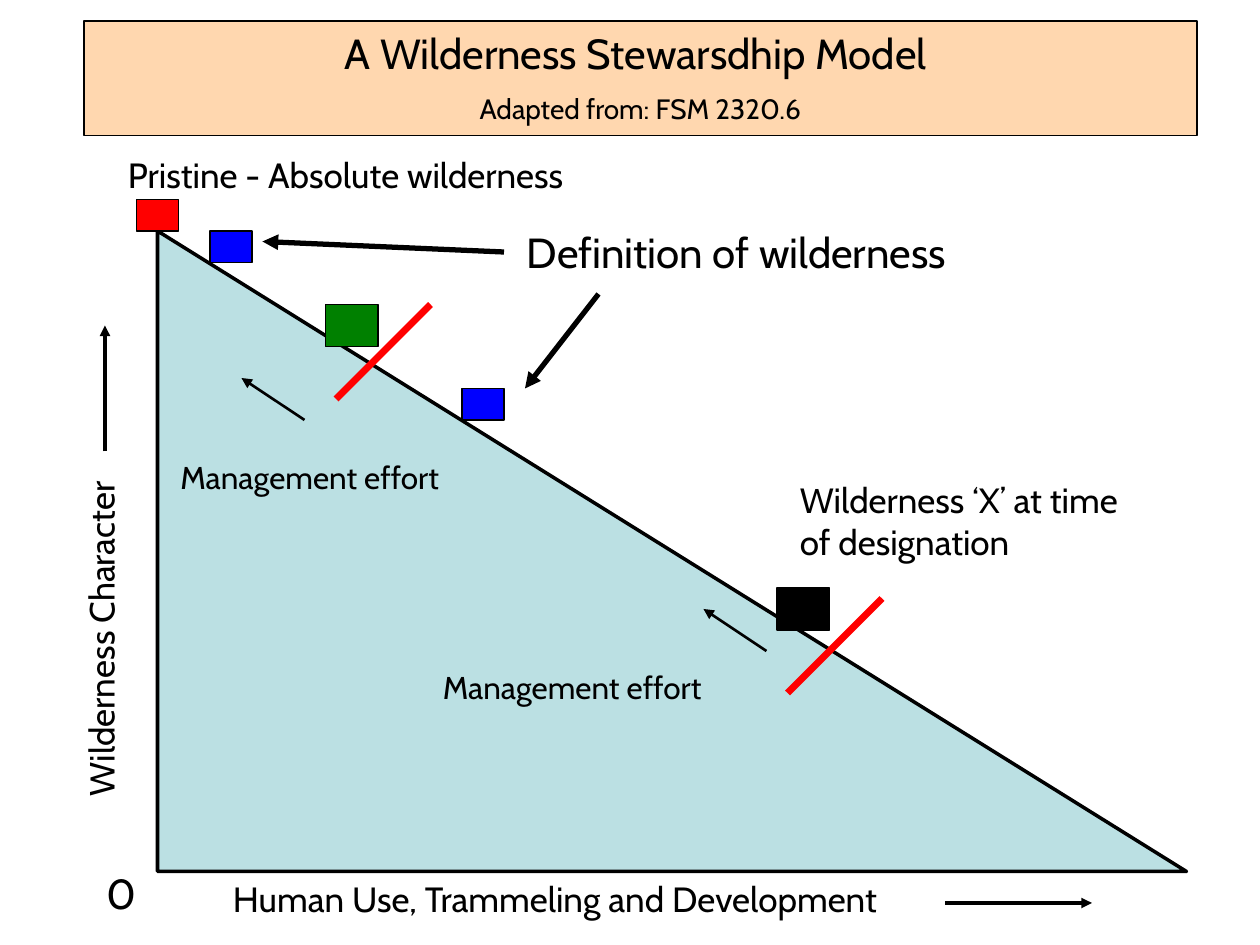
from dataclasses import dataclass

from lxml import etree
from pptx import Presentation
from pptx.dml.color import RGBColor
from pptx.enum.shapes import MSO_CONNECTOR, MSO_SHAPE
from pptx.enum.text import MSO_ANCHOR, PP_ALIGN
from pptx.oxml.ns import qn
from pptx.util import Emu, Pt

PX = 7620  # EMU per px, 120 px to the inch


def px(n):
    return Emu(n * PX)


@dataclass(frozen=True)
class Theme:
    font: str = "Cabin"
    ink: str = "000000"
    banner: str = "FFD7AF"
    area: str = "BBE0E3"
    red: str = "FF0000"
    blue: str = "0000FF"
    green: str = "008000"
    large: int = 24
    label: int = 20
    note: int = 18
    small: int = 16


class Canvas:
    def __init__(self, s, theme):
        self.s = s
        self.theme = theme

    def place(self, sp, box):
        sp.left, sp.top, sp.width, sp.height = map(px, box)

    def outline(self, sp, fill, width):
        sp.fill.solid()
        sp.fill.fore_color.rgb = RGBColor.from_string(fill)
        sp.line.color.rgb = RGBColor.from_string(self.theme.ink)
        sp.line.width = Pt(width)

    def style(self, p, size):
        for r in p.runs:
            r.font.name = self.theme.font
            r.font.size = Pt(size)
            r.font.color.rgb = RGBColor.from_string(self.theme.ink)

    def title(self, box, lines):
        sp = self.s.shapes.title
        self.place(sp, box)
        self.outline(sp, self.theme.banner, 0.75)
        tf = sp.text_frame
        tf.vertical_anchor = MSO_ANCHOR.TOP
        tf.text = "\n".join(text for text, _ in lines)
        for i, (p, (_, size)) in enumerate(zip(tf.paragraphs, lines)):
            p.alignment = PP_ALIGN.CENTER
            p.line_spacing = 1.0
            p.space_before = Pt(size / 2 if i else 0)
            self.style(p, size)

    def text(self, box, text, size, rotation=0):
        sp = self.s.shapes.add_textbox(*map(px, box))
        sp.rotation = rotation
        tf = sp.text_frame
        tf.word_wrap = True
        tf.text = text
        self.style(tf.paragraphs[0], size)

    def shape(self, kind, box, fill, width=0.75):
        sp = self.s.shapes.add_shape(kind, *map(px, box))
        sp.shadow.inherit = False
        self.outline(sp, fill, width)

    def line(self, start, end, width, color=None, arrow=True):
        c = self.s.shapes.add_connector(
            MSO_CONNECTOR.STRAIGHT, *map(px, (*start, *end)))
        c.line.color.rgb = RGBColor.from_string(color or self.theme.ink)
        c.line.width = Pt(width)
        if arrow:
            ln = c.line._get_or_add_ln()
            etree.SubElement(ln, qn("a:tailEnd"), type="triangle")
        etree.SubElement(c._element.spPr, qn("a:effectLst"))


def main():
    prs = Presentation()
    prs.slide_width, prs.slide_height = px(1200), px(900)
    t = Theme()
    c = Canvas(prs.slides.add_slide(prs.slide_layouts[5]), t)

    # Title banner
    c.title((80, 20, 1060, 109), [
        ("A Wilderness Stewarsdhip Model ", t.large),
        ("Adapted from: FSM 2320.6", t.small),
    ])

    # Wilderness slope
    c.shape(MSO_SHAPE.RIGHT_TRIANGLE, (150, 220, 980, 610), t.area, 2)

    # Axis labels and arrows
    c.text((210, 830, 840, 52), "Human Use, Trammeling and Development", t.label)
    c.text((-164, 484, 520, 52), "Wilderness Character", t.label, 270)
    c.text((90, 820, 60, 60), "0", t.large)
    c.line((100, 430), (100, 310), 2)
    c.line((900, 860), (1040, 860), 2)

    # Labels on the slope
    c.text((110, 140, 690, 52), "Pristine - Absolute wilderness", t.label)
    c.text((490, 210, 680, 60), "Definition of wilderness", t.large)
    c.text((750, 450, 360, 92), "Wilderness ‘X’ at time of designation", t.label)

    # Marker squares along the slope
    for x, y, w, h, fill in [
        (130, 190, 40, 30, t.red),
        (200, 220, 40, 30, t.blue),
        (440, 370, 40, 30, t.blue),
        (310, 290, 50, 40, t.green),
        (740, 560, 50, 40, t.ink),
    ]:
        c.shape(MSO_SHAPE.RECTANGLE, (x, y, w, h), fill)

    # Arrows from the definition
    c.line((480, 240), (250, 230), 3)
    c.line((570, 280), (500, 370), 3)

    # Red limits across the slope
    for x, y in [(410, 290), (840, 570)]:
        c.line((x, y), (x - 90, y + 90), 4, t.red, arrow=False)

    # Management effort: label and arrow up the slope
    for label, (x, y) in [((160, 430), (290, 400)), ((410, 630), (730, 620))]:
        c.text((*label, 290, 48), "Management effort", t.note)
        c.line((x, y), (x - 60, y - 40), 1.5)

    prs.save("out.pptx")


if __name__ == "__main__":
    main()
